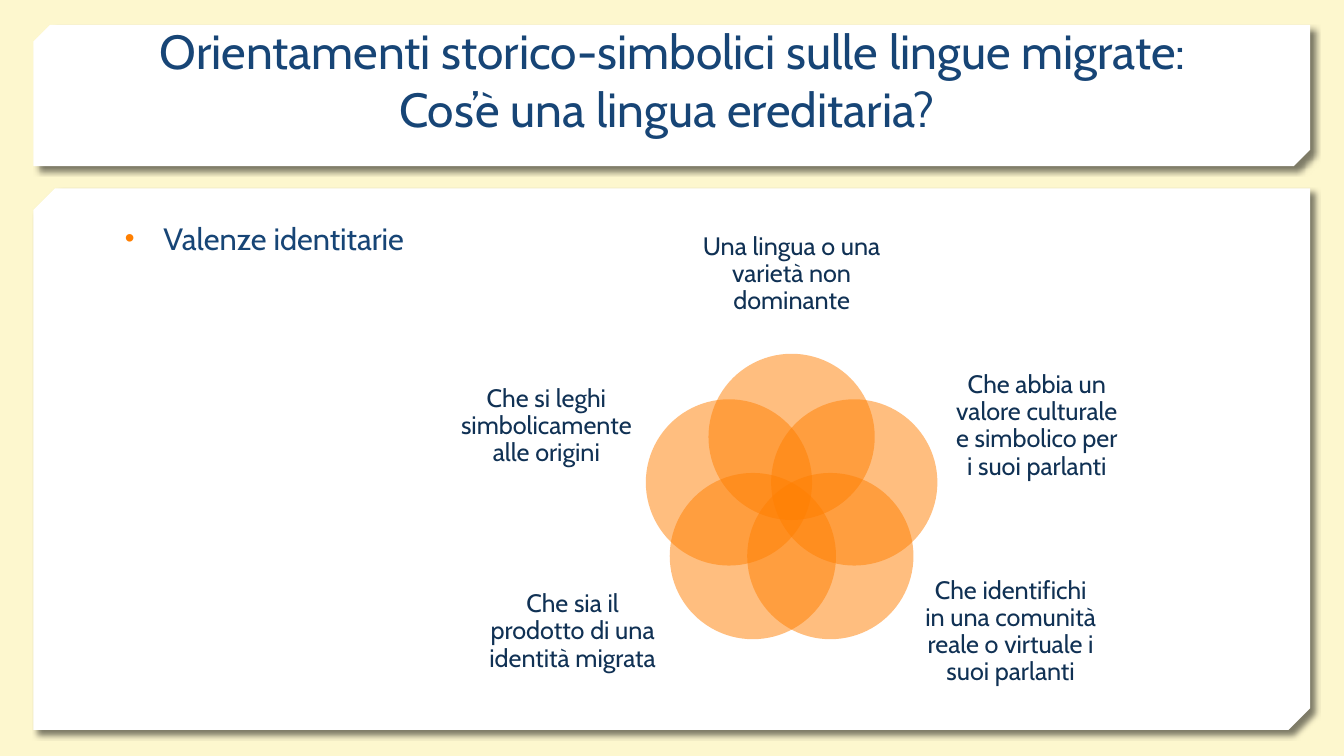
from math import cos, pi, sin

from lxml.etree import SubElement as Sub
from pptx import Presentation
from pptx.dml.color import RGBColor
from pptx.enum.shapes import MSO_SHAPE as Shape
from pptx.enum.text import MSO_ANCHOR as Anchor, PP_ALIGN as Align
from pptx.oxml.ns import qn
from pptx.util import Cm, Pt

FONT = "Cabin"
CREAM, WHITE, BLACK = "FDF7CE", "FFFFFF", "000000"
BLUE, NAVY, ORANGE = "174576", "103154", "FF7F01"

# Label text, centre offset from the middle of the ring, and size, in cm
LABELS = [
    ("Una lingua o una varietà non dominante", 0, -5.75, 4.85, 2.82),
    ("Che abbia un valore culturale e simbolico per i suoi parlanti",
     6.18, -1.93, 4.34, 3.05),
    ("Che identifichi in una comunità reale o virtuale i suoi parlanti",
     5.52, 3.25, 4.34, 3.05),
    ("Che sia il prodotto di una identità migrata", -5.52, 3.25, 4.34, 3.05),
    ("Che si leghi simbolicamente alle origini", -6.18, -1.93, 4.34, 3.05),
]


def color(code):
    return RGBColor.from_string(code)


def node(parent, tag, **attrs):
    return Sub(parent, qn(tag), {key: str(val) for key, val in attrs.items()})


def add_text(slide, box, text, size=18, ink=NAVY, align=Align.CENTER,
             anchor=Anchor.MIDDLE, inset=(0, 0), lines=None):
    frame = slide.shapes.add_textbox(*map(Cm, box)).text_frame
    frame.word_wrap = True
    frame.vertical_anchor = anchor
    frame.margin_left = frame.margin_right = Cm(inset[0])
    frame.margin_top = frame.margin_bottom = Cm(inset[1])
    para = frame.paragraphs[0]
    para.text = text
    para.alignment = align
    para.line_spacing = lines
    for run in para.runs:
        run.font.name = FONT
        run.font.size = Pt(size)
        run.font.color.rgb = color(ink)
    return para


def add_plain(slide, kind, box, fill):
    """Add a filled shape without line or shadow."""
    item = slide.shapes.add_shape(kind, *map(Cm, box))
    item.shadow.inherit = False
    item.fill.solid()
    item.fill.fore_color.rgb = color(fill)
    item.line.fill.background()
    return item


def add_panel(slide, box, snip):
    """Add a white card with two snipped corners and a soft shadow."""
    card = add_plain(slide, Shape.SNIP_2_DIAG_RECTANGLE, box, WHITE)
    card.adjustments[0], card.adjustments[1] = snip, 0
    effects = card._element.spPr.find(qn("a:effectLst"))
    shade = node(effects, "a:outerShdw", blurRad=Pt(4), dist=Pt(5),
                 dir=45 * 60000, algn="tl", rotWithShape=0)
    node(node(shade, "a:srgbClr", val=BLACK), "a:alpha", val=50000)


def add_title(slide, box):
    left, top, width, height = box
    add_panel(slide, box, 0.117)
    add_text(slide, (left + 1.5, top + 0.33, width - 2.97, 2.62),
             "Orientamenti storico-simbolici sulle lingue migrate:\v"
             "Cos’è una lingua ereditaria? ",
             size=34.2, ink=BLUE, anchor=Anchor.BOTTOM, inset=(0.25, 0.13))


def add_bullet(slide, box):
    para = add_text(slide, box, "Valenze identitarie", size=22, ink=BLUE,
                    align=Align.LEFT, anchor=Anchor.TOP, inset=(0.25, 0.13))
    props = para._p.get_or_add_pPr()
    props.set("marL", str(Cm(0.97)))
    props.set("indent", str(-Cm(0.97)))
    node(node(props, "a:buClr"), "a:srgbClr", val=ORANGE)
    node(props, "a:buSzPct", val=90000)
    node(props, "a:buFont", typeface="Arial")
    node(props, "a:buChar", char="•")


def add_ring(slide, mid, row, radius=1.66, size=4.19):
    """Add overlapping circles around a centre, each with its label."""
    for num, (text, right, down, width, height) in enumerate(LABELS):
        turn = 2 * pi * num / len(LABELS)
        left = mid + radius * sin(turn) - size / 2
        top = row - radius * cos(turn) - size / 2
        disc = add_plain(slide, Shape.OVAL, (left, top, size, size), ORANGE)
        tint = disc._element.spPr.find(qn("a:solidFill"))[0]
        node(tint, "a:alpha", val=50000)
        box = (mid + right - width / 2, row + down - height / 2, width, height)
        add_text(slide, box, text, lines=0.9)


def add_body(slide, box):
    left, top, width, height = box
    add_panel(slide, box, 0.04)
    add_ring(slide, left + 19.11, top + 7.92)
    add_bullet(slide, (left + 2.06, top + 0.66, 9, 1.5))


def main():
    deck = Presentation()
    deck.slide_width, deck.slide_height = Cm(33.87), Cm(19.05)
    slide = deck.slides.add_slide(deck.slide_layouts[6])
    slide.background.fill.solid()
    slide.background.fill.fore_color.rgb = color(CREAM)
    add_body(slide, (0.84, 4.75, 32.18, 13.64))
    add_title(slide, (0.84, 0.63, 32.18, 3.56))
    deck.save("out.pptx")


if __name__ == "__main__":
    main()
